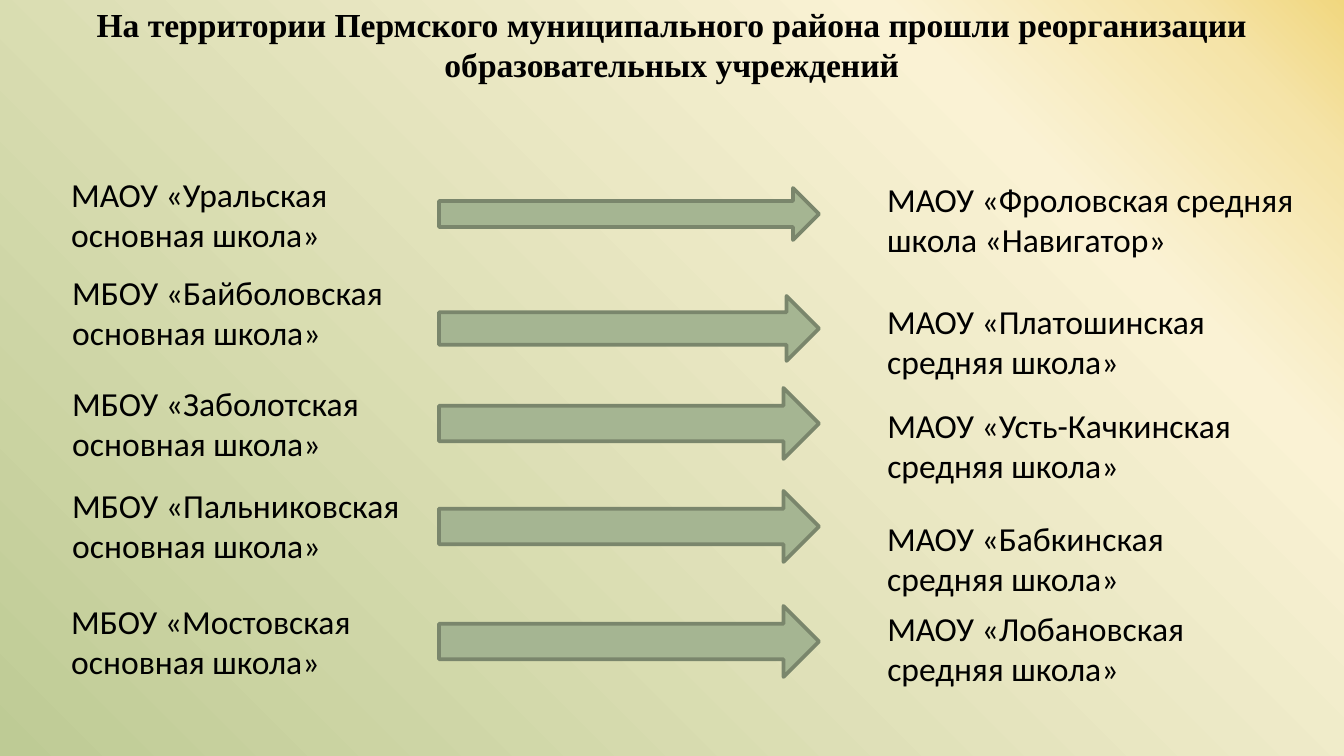
import pptx
import pptx.dml.color
import pptx.enum.shapes
import pptx.enum.text
import pptx.oxml
import pptx.oxml.ns
import pptx.util

PX = 914400 / 134.4
COLORS = {"text": "000000", "arrow": "A5B592", "outline": "7A866C"}
BACKGROUND = [(0, "BECB95"), (78, "FAF2D4"), (92, "F5E4A9"), (100, "F1D77F")]
TEXT_HEIGHT = 95
ARROW_LEFT, ARROW_WIDTH = 439, 380
RIGHT_LEFT = 874

TITLE = ("На территории Пермского муниципального района прошли "
         "реорганизации образовательных учреждений")
# Each school: left, top, width, paragraphs
OLD_SCHOOLS = [
    (58, 167, 413, ["МАОУ «Уральская основная школа»"]),
    (59, 265, 348, ["МБОУ «Байболовская", "основная школа»"]),
    (59, 376, 324, ["МБОУ «Заболотская", "основная школа»"]),
    (59, 478, 366, ["МБОУ «Пальниковская", "основная школа»"]),
    (58, 594, 317, ["МБОУ «Мостовская", "основная школа»"]),
]
# Each arrow: top, height
ARROWS = [(188, 52), (296, 65), (388, 71), (491, 71), (606, 71)]
# Each school: top, width, paragraphs
NEW_SCHOOLS = [
    (172, 445, ["МАОУ «Фроловская средняя", "школа «Навигатор»"]),
    (294, 356, ["МАОУ «Платошинская", "средняя школа»"]),
    (398, 382, ["МАОУ «Усть-Качкинская", "средняя школа»"]),
    (511, 314, ["МАОУ «Бабкинская", "средняя школа»"]),
    (601, 335, ["МАОУ «Лобановская", "средняя школа»"]),
]


def px(*lengths):
    return [pptx.util.Emu(round(length * PX)) for length in lengths]


def rgb(name):
    return pptx.dml.color.RGBColor.from_string(COLORS[name])


def paint_background(page):
    fill = page.background.fill
    fill.gradient()
    fill.gradient_angle = 45
    stops = page.element.find(".//" + pptx.oxml.ns.qn("a:gsLst"))
    for stop in list(stops):
        stops.remove(stop)
    for percent, color in BACKGROUND:
        stops.append(pptx.oxml.parse_xml(
            f'<a:gs {pptx.oxml.ns.nsdecls("a")} pos="{percent * 1000}">'
            f'<a:srgbClr val="{color}"/></a:gs>'))


def add_text(page, left, top, width, lines, font="Calibri", bold=False,
             align=pptx.enum.text.PP_ALIGN.LEFT, wrap=False):
    box = page.shapes.add_textbox(*px(left, top, width, TEXT_HEIGHT))
    frame = box.text_frame
    frame.word_wrap = wrap
    frame.auto_size = pptx.enum.text.MSO_AUTO_SIZE.SHAPE_TO_FIT_TEXT
    for index, line in enumerate(lines):
        para = frame.add_paragraph() if index else frame.paragraphs[0]
        para.alignment = align
        span = para.add_run()
        span.text = line
        span.font.name = font
        span.font.size = pptx.util.Pt(18)
        span.font.bold = bold
        span.font.color.rgb = rgb("text")


def add_arrow(page, top, height):
    arrow = page.shapes.add_shape(
        pptx.enum.shapes.MSO_SHAPE.RIGHT_ARROW,
        *px(ARROW_LEFT, top, ARROW_WIDTH, height))
    arrow.shadow.inherit = False
    arrow.fill.solid()
    arrow.fill.fore_color.rgb = rgb("arrow")
    arrow.line.color.rgb = rgb("outline")
    arrow.line.width = pptx.util.Pt(2)


def main():
    deck = pptx.Presentation()
    deck.slide_width, deck.slide_height = px(1344, 756)
    page = deck.slides.add_slide(deck.slide_layouts[6])
    paint_background(page)
    add_text(page, 0, -3, 1344, [TITLE], font="Times New Roman", bold=True,
             align=pptx.enum.text.PP_ALIGN.CENTER, wrap=True)
    for left, top, width, lines in OLD_SCHOOLS:
        add_text(page, left, top, width, lines, wrap=len(lines) == 1)
    for top, height in ARROWS:
        add_arrow(page, top, height)
    for top, width, lines in NEW_SCHOOLS:
        add_text(page, RIGHT_LEFT, top, width, lines)
    deck.save("out.pptx")


if __name__ == "__main__":
    main()
